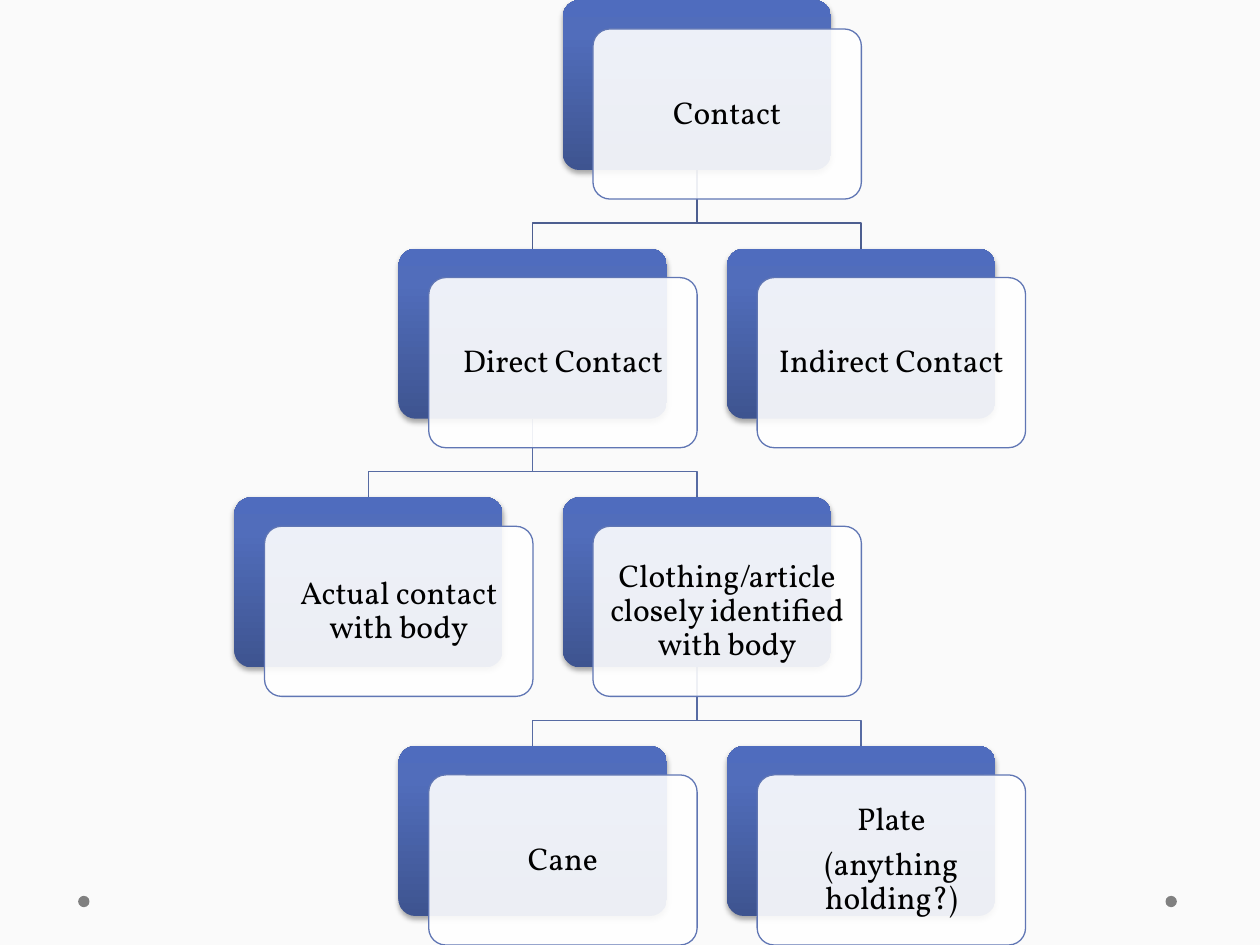
from dataclasses import dataclass

import pptx
import pptx.dml.color
import pptx.enum.shapes
import pptx.enum.text
import pptx.oxml
import pptx.oxml.ns
import pptx.util
from pptx.util import Inches

SHAPE = pptx.enum.shapes.MSO_SHAPE


@dataclass(frozen=True)
class Theme:
    background: str = "FAFAFA"
    dot: str = "808080"
    card: str = "FFFFFF"
    card_opacity: int = 90
    outline: str = "6076B4"
    text: str = "000000"
    shadow: str = "000000"
    gradient: tuple = ((0, "3E5490"), (80, "516DBB"), (100, "4F6CBE"))
    top_link: str = "4D5E90"
    lower_link: str = "576BA3"
    font: str = "Vollkorn"
    size: float = 18
    space_after: float = 6.3
    line: float = 0.75


THEME = Theme()
PLATE_WIDTH, PLATE_HEIGHT = Inches(2.13), Inches(1.35)
CARD_DX, CARD_DY = Inches(0.24), Inches(0.23)
LINK_DROP = Inches(0.42)

NODES = {
    "contact": (2, 0, ["Contact"]),
    "direct": (1, 1, ["Direct Contact"]),
    "body": (0, 2, ["Actual contact with body"]),
    "clothing": (2, 2, ["Clothing/article closely identified with body"]),
    "cane": (1, 3, ["Cane"]),
    "plate": (3, 3, ["Plate", "(anything holding?)"]),
    "indirect": (3, 1, ["Indirect Contact"]),
}
LINKS = [
    ("contact", "indirect"),
    ("clothing", "plate"),
    ("clothing", "cane"),
    ("direct", "clothing"),
    ("direct", "body"),
    ("contact", "direct"),
]


def rgb(value):
    return pptx.dml.color.RGBColor.from_string(value)


def element(tag, content, attributes=""):
    namespace = pptx.oxml.ns.nsdecls("a")
    return pptx.oxml.parse_xml(f"<a:{tag} {namespace} {attributes}>{content}</a:{tag}>")


def find(shape, tag):
    return shape._element.spPr.find(".//" + pptx.oxml.ns.qn(tag))


def add_dot(slide, left, top):
    size = Inches(0.09)
    dot = slide.shapes.add_shape(SHAPE.OVAL, left, top, size, size)
    dot.shadow.inherit = False
    dot.fill.solid()
    dot.fill.fore_color.rgb = rgb(THEME.dot)
    dot.line.fill.background()


def add_link(slide, parent, child, color):
    start_x, end_x = (corner[0] + PLATE_WIDTH // 2 for corner in (parent, child))
    start_y = parent[1] + PLATE_HEIGHT
    bend_y = start_y + LINK_DROP
    builder = slide.shapes.build_freeform(start_x, start_y)
    builder.add_line_segments(
        [(start_x, bend_y), (end_x, bend_y), (end_x, child[1])], close=False
    )
    link = builder.convert_to_shape()
    link.shadow.inherit = False
    link.fill.background()
    link.line.color.rgb = rgb(color)
    link.line.width = pptx.util.Pt(THEME.line)


def add_rounded(slide, left, top):
    rounded = slide.shapes.add_shape(
        SHAPE.ROUNDED_RECTANGLE, left, top, PLATE_WIDTH, PLATE_HEIGHT
    )
    rounded.adjustments[0] = 0.1
    rounded.shadow.inherit = False
    return rounded


def add_plate(slide, left, top):
    plate = add_rounded(slide, left, top)
    plate.line.fill.background()
    plate.fill.gradient()
    plate.fill.gradient_angle = 90
    stops = find(plate, "a:gsLst")
    stops[:] = [
        element("gs", f'<a:srgbClr val="{color}"/>', f'pos="{position * 1000}"')
        for position, color in THEME.gradient
    ]
    find(plate, "a:effectLst").append(
        element(
            "outerShdw",
            f'<a:srgbClr val="{THEME.shadow}"><a:alpha val="35000"/></a:srgbClr>',
            f'blurRad="{pptx.util.Pt(3.1)}" dist="{pptx.util.Pt(1.8)}" '
            'dir="5400000" rotWithShape="0"',
        )
    )


def add_card(slide, left, top, lines):
    card = add_rounded(slide, left, top)
    card.fill.solid()
    card.fill.fore_color.rgb = rgb(THEME.card)
    find(card, "a:srgbClr").append(
        element("alpha", "", f'val="{THEME.card_opacity * 1000}"')
    )
    card.line.color.rgb = rgb(THEME.outline)
    card.line.width = pptx.util.Pt(THEME.line)

    frame = card.text_frame
    frame.word_wrap = True
    frame.vertical_anchor = pptx.enum.text.MSO_ANCHOR.MIDDLE
    frame.margin_left = frame.margin_right = Inches(0.07)
    frame.margin_top = frame.margin_bottom = Inches(0.07)
    frame.text = "\n".join(lines)
    for paragraph in frame.paragraphs:
        paragraph.alignment = pptx.enum.text.PP_ALIGN.CENTER
        paragraph.line_spacing = 0.9
        paragraph.space_after = pptx.util.Pt(THEME.space_after)
        paragraph.font.name = THEME.font
        paragraph.font.size = pptx.util.Pt(THEME.size)
        paragraph.font.color.rgb = rgb(THEME.text)


def add_hierarchy(slide, left, top, width, height):
    column_pitch = (width - PLATE_WIDTH - CARD_DX) / 3
    row_pitch = (height - PLATE_HEIGHT - CARD_DY) / 3
    corners = {
        key: (round(left + column * column_pitch), round(top + row * row_pitch))
        for key, (column, row, _) in NODES.items()
    }
    for parent, child in LINKS:
        color = THEME.top_link if parent == "contact" else THEME.lower_link
        add_link(slide, corners[parent], corners[child], color)
    for key, (_, _, lines) in NODES.items():
        x, y = corners[key]
        add_plate(slide, x, y)
        add_card(slide, x + CARD_DX, y + CARD_DY, lines)


def main():
    presentation = pptx.Presentation()
    presentation.slide_width, presentation.slide_height = Inches(10), Inches(7.5)
    slide = presentation.slides.add_slide(presentation.slide_layouts[6])
    slide.background.fill.solid()
    slide.background.fill.fore_color.rgb = rgb(THEME.background)
    for dot_left in (9.25, 0.62):
        add_dot(slide, Inches(dot_left), Inches(7.11))
    add_hierarchy(slide, Inches(1.86), 0, Inches(6.28), Inches(7.5))
    presentation.save("out.pptx")


if __name__ == "__main__":
    main()
